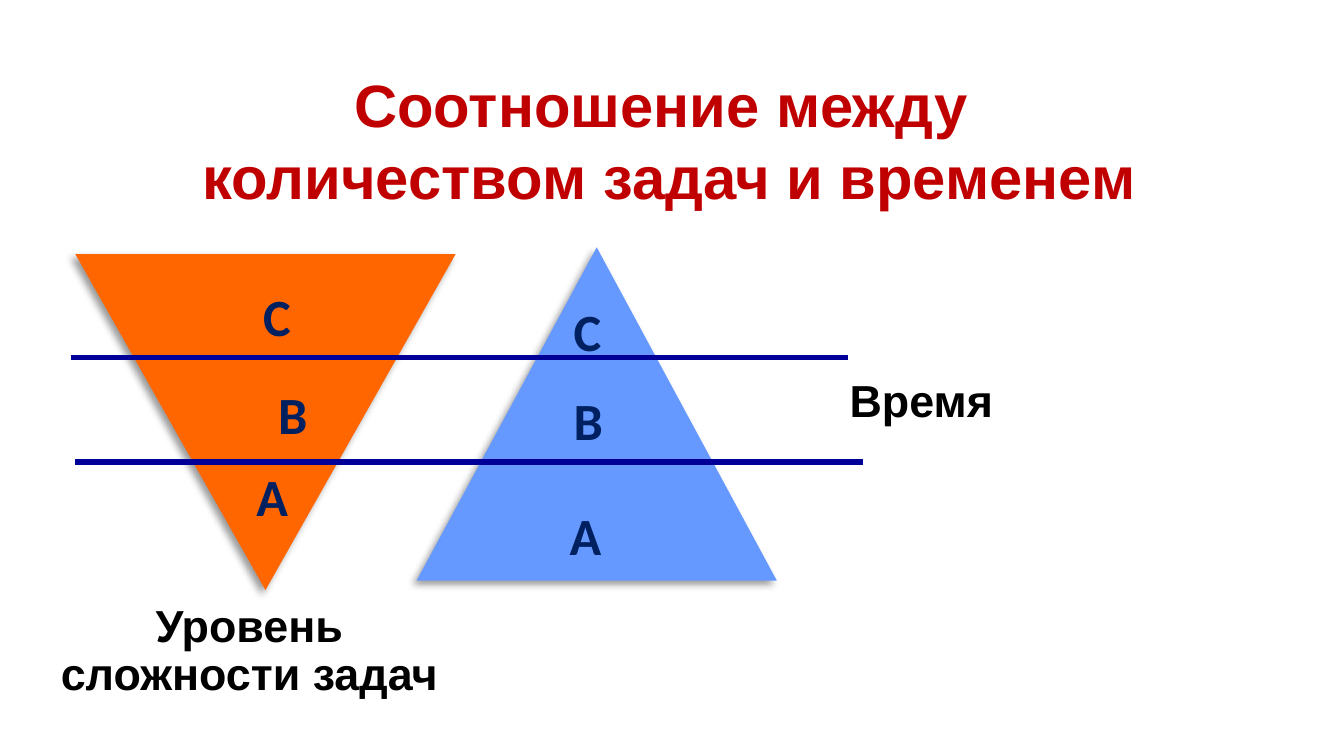
from lxml import etree
from pptx import Presentation
from pptx.dml.color import RGBColor
from pptx.enum.shapes import MSO_CONNECTOR as Connector, MSO_SHAPE as Shape
from pptx.enum.text import MSO_ANCHOR as Anchor, MSO_AUTO_SIZE as AutoSize, PP_ALIGN as Align
from pptx.oxml import parse_xml
from pptx.oxml.ns import nsdecls, qn
from pptx.util import Inches, Pt

COLORS = {
    "title": "C00000",
    "label": "000000",
    "letter": "002060",
    "tasks": "FF6600",
    "time": "6699FF",
    "divider": "000099",
}
TITLE = {"name": "Arial", "size": Pt(32), "bold": True}
LABEL = {"name": "Arial", "size": Pt(24), "bold": True}
LETTER = {"name": "Calibri", "size": Pt(28), "bold": True}
SHADOW = (
    f'<a:effectLst {nsdecls("a")}>'
    f'<a:outerShdw blurRad="{Pt(4)}" dist="{Pt(3)}" dir="8100000" rotWithShape="0">'
    '<a:srgbClr val="000000"><a:alpha val="40000"/></a:srgbClr>'
    "</a:outerShdw></a:effectLst>"
)


class SlideBuilder:
    def __init__(self, slide, colors):
        self.slide = slide
        self.colors = colors

    def color(self, key):
        return RGBColor.from_string(self.colors[key])

    def format(self, paragraph, style, color, **layout):
        for name, value in style.items():
            setattr(paragraph.font, name, value)
        paragraph.font.color.rgb = self.color(color)
        for name, value in layout.items():
            setattr(paragraph, name, value)

    def title(self, lines, left, top, width, height):
        heading = self.slide.shapes.title
        heading.left, heading.top = Inches(left), Inches(top)
        heading.width, heading.height = Inches(width), Inches(height)
        frame = heading.text_frame
        frame.text = "\n".join(lines)
        frame.word_wrap = True
        frame.auto_size = AutoSize.NONE
        frame.vertical_anchor = Anchor.MIDDLE
        for paragraph in frame.paragraphs:
            self.format(paragraph, TITLE, "title", alignment=Align.CENTER)

    def text(self, words, style, color, *box, **layout):
        frame = self.slide.shapes.add_textbox(*map(Inches, box)).text_frame
        frame.word_wrap = True
        paragraph = frame.paragraphs[0]
        paragraph.text = words
        self.format(paragraph, style, color, **layout)

    def triangle(self, color, *box, rotation=0):
        triangle = self.slide.shapes.add_shape(Shape.ISOSCELES_TRIANGLE, *map(Inches, box))
        triangle.rotation = rotation
        triangle.fill.solid()
        triangle.fill.fore_color.rgb = self.color(color)
        triangle.line.fill.background()
        triangle._element.spPr.append(parse_xml(SHADOW))

    def divider(self, left, right, y):
        line = self.slide.shapes.add_connector(
            Connector.STRAIGHT, Inches(left), Inches(y), Inches(right), Inches(y))
        line.line.color.rgb = self.color("divider")
        line.line.width = Pt(3)
        etree.SubElement(line._element.spPr, qn("a:effectLst"))


def main():
    deck = Presentation()
    deck.slide_width = Inches(10)
    deck.slide_height = deck.slide_width * 9 // 16
    title_only = deck.slide_layouts[5]
    builder = SlideBuilder(deck.slides.add_slide(title_only), COLORS)

    # Captions of the two triangles
    builder.text("Время", LABEL, "label", 5.94, 2.8, 1.83, 0.44,
                 alignment=Align.CENTER, line_spacing=0.8)
    builder.text("Уровень сложности задач", LABEL, "label", 0.19, 4.44, 3.33, 0.67,
                 alignment=Align.CENTER, line_spacing=0.9)

    # Task difficulty points down, time points up
    builder.triangle("tasks", 0.56, 1.89, 2.83, 2.5, rotation=180)
    builder.triangle("time", 3.1, 1.84, 2.68, 2.48)

    # Lines between the levels
    builder.divider(0.53, 6.31, 2.66)
    builder.divider(0.56, 6.42, 3.44)

    # Level letters: difficulty first, then time
    for letter, *box in [
        ("С", 1.86, 2.12, 0.42, 0.31),
        ("В", 1.97, 2.85, 0.42, 0.31),
        ("А", 1.81, 3.46, 0.42, 0.31),
        ("С", 4.17, 2.23, 0.54, 0.41),
        ("В", 4.17, 2.89, 0.54, 0.35),
        ("А", 4.14, 3.75, 0.42, 0.31),
    ]:
        builder.text(letter, LETTER, "letter", *box, line_spacing=0.9)

    # Heading
    builder.title(["Соотношение между", " количеством задач и временем"], 0.42, 0.63, 9, 0.82)

    deck.save("out.pptx")


if __name__ == "__main__":
    main()
